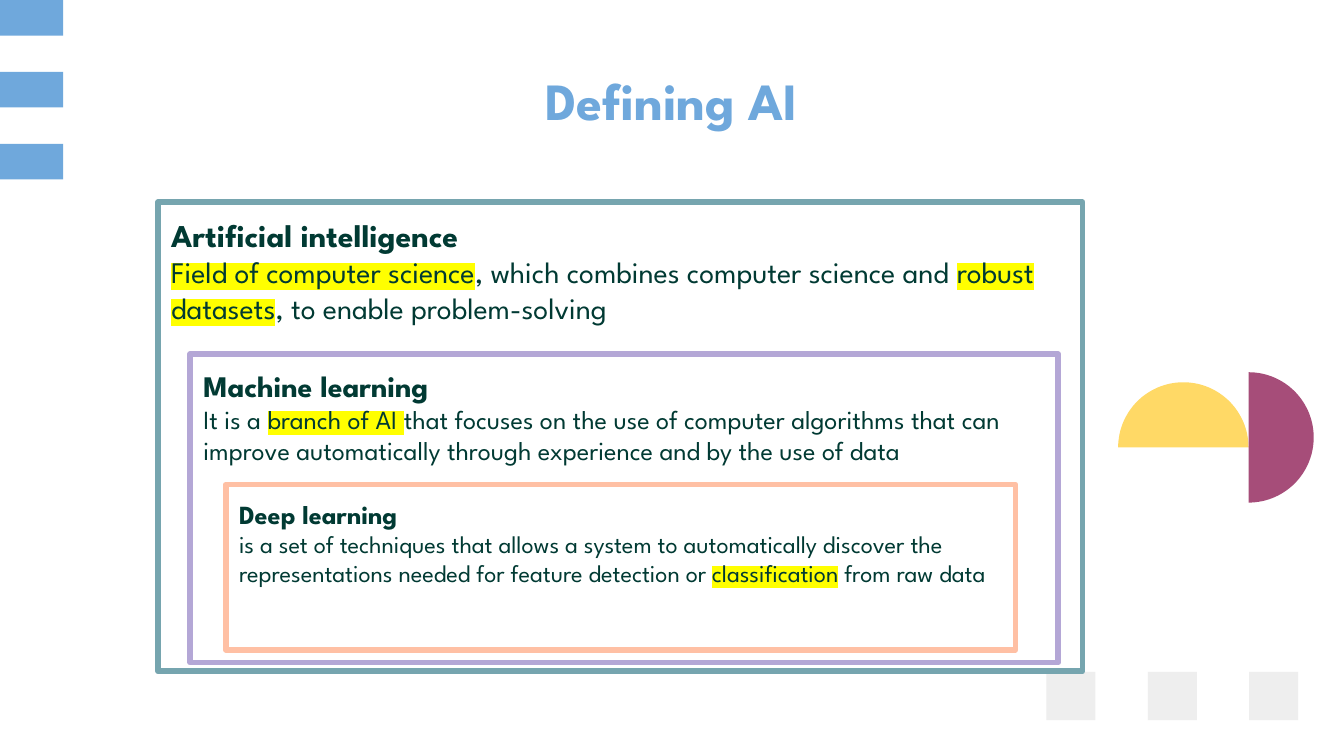
from math import cos, radians, sin

from lxml.etree import SubElement
from pptx import Presentation
from pptx.dml.color import RGBColor
from pptx.enum.shapes import MSO_SHAPE as Shape
from pptx.enum.text import MSO_ANCHOR as Anchor, PP_ALIGN as Align
from pptx.oxml.ns import qn
from pptx.util import Pt

PX = 4572
FONT = "League Spartan"
INK = "013A33"
BLUE = "6FA8DC"
INSET = 20 * PX
RADIUS = 97


def paint(fill, color):
    fill.solid()
    fill.fore_color.rgb = RGBColor.from_string(color)


def style_text(paragraph, size, color, bold, align):
    paragraph.alignment = align
    font = paragraph.font
    font.name, font.size, font.bold = FONT, Pt(size), bold
    paint(font.fill, color)


deck = Presentation()
deck.slide_width, deck.slide_height = 2000 * PX, 1125 * PX
page = deck.slides.add_slide(deck.slide_layouts[6])

blocks = [(1557 + 151 * i, 1000, 73, 72, "EEEEEE") for i in range(3)]
blocks += [(0, 107 * i, 94, 53, BLUE) for i in (2, 1, 0)]
for left, top, width, height, color in blocks:
    block = page.shapes.add_shape(
        Shape.RECTANGLE, left * PX, top * PX, width * PX, height * PX)
    block.shadow.inherit = False
    paint(block.fill, color)
    block.line.fill.background()

for center_x, center_y, start, color in [
    (1761, 666, 180, "FFD966"),
    (1858, 651, -90, "A64D79"),
]:
    arc = [
        ((center_x + RADIUS * cos(radians(angle))) * PX,
         (center_y + RADIUS * sin(radians(angle))) * PX)
        for angle in range(start, start + 181, 3)
    ]
    builder = page.shapes.build_freeform(*arc[0])
    builder.add_line_segments(arc[1:], close=True)
    half_disc = builder.convert_to_shape()
    half_disc.shadow.inherit = False
    paint(half_disc.fill, color)
    half_disc.line.fill.background()

title = page.shapes.add_textbox(156 * PX, 118 * PX, 1688 * PX, 60 * PX)
title.text_frame.word_wrap = True
title.text_frame.vertical_anchor = Anchor.MIDDLE
heading = title.text_frame.paragraphs[0]
heading.add_run().text = "Defining AI"
style_text(heading, 28, BLUE, True, Align.CENTER)

definitions = [
    ((235, 301, 1376, 698), "76A5AF", "Artificial intelligence", 17, 16, [
        ("Field of computer science", True),
        (", which combines computer science and ", False),
        ("robust datasets", True),
        (", to enable problem-solving", False),
    ]),
    ((283, 527, 1292, 459), "B4A7D6", "Machine learning", 16, 14, [
        ("It is a ", False),
        ("branch of AI ", True),
        ("that focuses on the use of computer algorithms that can improve "
         "automatically through experience and by the use of data", False),
    ]),
    ((336, 721, 1175, 246), "FFC0A4", "Deep learning", 14, 13, [
        ("is a set of techniques that allows a system to automatically discover "
         "the representations needed for feature detection or ", False),
        ("classification", True),
        (" from raw data", False),
    ]),
]
for bounds, color, term, term_size, body_size, spans in definitions:
    box = page.shapes.add_shape(Shape.RECTANGLE, *(n * PX for n in bounds))
    box.shadow.inherit = False
    box.fill.background()
    paint(box.line.fill, color)
    box.line.width = Pt(3)
    SubElement(box.element.spPr.find(qn("a:ln")), qn("a:round"))

    frame = box.text_frame
    frame.word_wrap = True
    frame.vertical_anchor = Anchor.TOP
    frame.margin_left = frame.margin_right = INSET
    frame.margin_top = frame.margin_bottom = INSET

    name = frame.paragraphs[0]
    name.add_run().text = term
    style_text(name, term_size, INK, True, Align.LEFT)

    body = frame.add_paragraph()
    style_text(body, body_size, INK, False, Align.LEFT)
    for text, marked in spans:
        span = body.add_run()
        span.text = text
        if marked:
            properties = span._r.get_or_add_rPr()
            highlight = SubElement(properties, qn("a:highlight"))
            SubElement(highlight, qn("a:srgbClr"), val="FFFF00")

deck.save("out.pptx")
